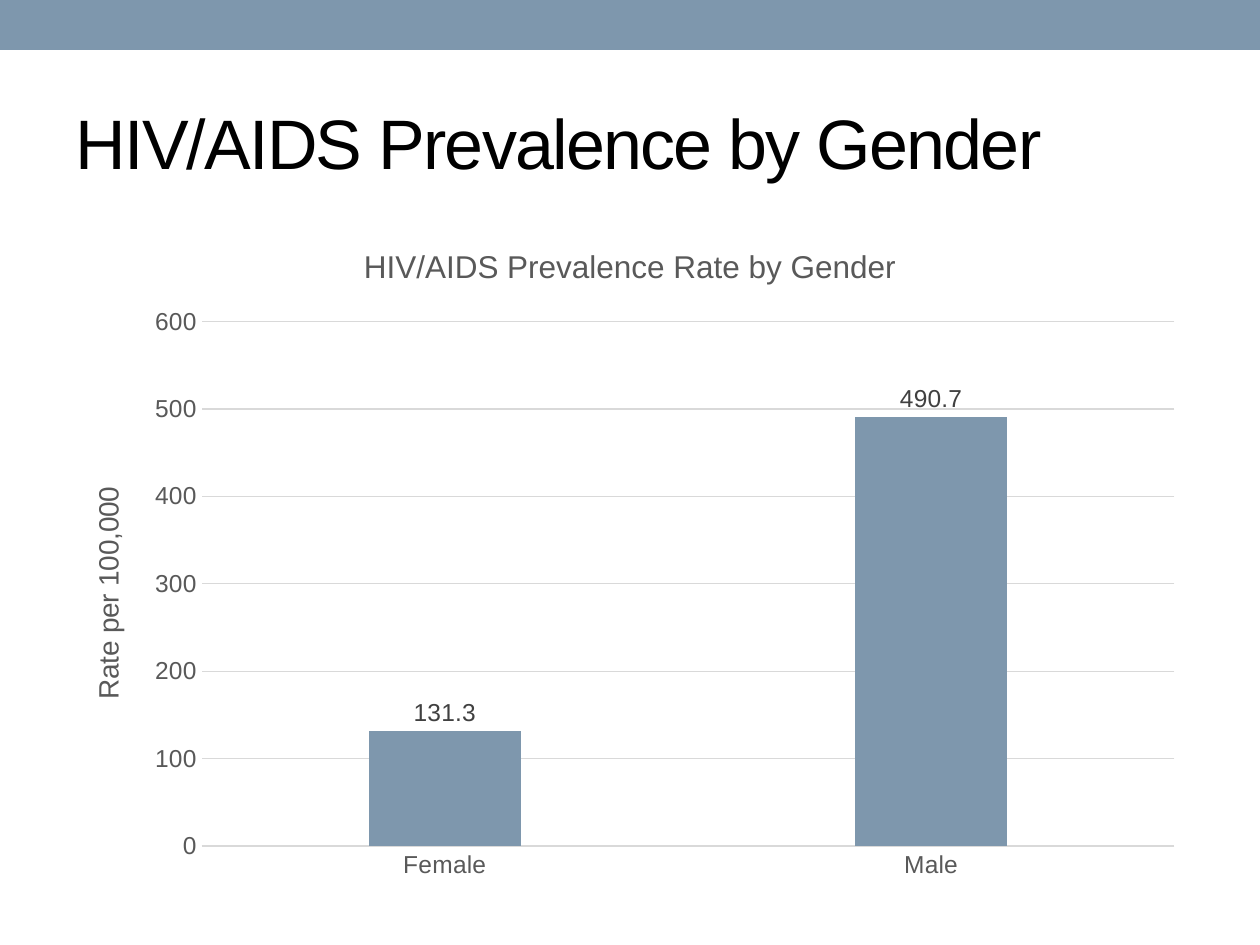
import pptx
import pptx.chart.data
import pptx.dml.color
import pptx.enum.chart
import pptx.enum.shapes
import pptx.enum.text
import pptx.util

SCALE = 914400 / 126
BLUE = "7E97AD"
GREY = "595959"
PALE = "D9D9D9"


def emu(*px):
    return [pptx.util.Emu(round(n * SCALE)) for n in px]


def tint(code):
    return pptx.dml.color.RGBColor.from_string(code)


class Deck:
    """Holds the font and the current slide."""

    def __init__(self, width, height, face):
        self.face = face
        self.show = pptx.Presentation()
        self.show.slide_width, self.show.slide_height = emu(width, height)
        self.slide = self.show.slides.add_slide(self.show.slide_layouts[5])

    def style(self, font, size, color):
        font.name = self.face
        font.size = pptx.util.Pt(size)
        font.bold = False
        font.color.rgb = tint(color)

    def rule(self, line):
        line.color.rgb = tint(PALE)
        line.width = pptx.util.Pt(0.75)

    def band(self, box, color):
        kind = pptx.enum.shapes.MSO_SHAPE.RECTANGLE
        band = self.slide.shapes.add_shape(kind, *emu(*box))
        band.shadow.inherit = False
        band.fill.solid()
        band.fill.fore_color.rgb = tint(color)
        band.line.fill.background()

    def title(self, box, text, size):
        head = self.slide.shapes.title
        head.left, head.top, head.width, head.height = emu(*box)
        frame = head.text_frame
        frame.text = text
        frame.word_wrap = True
        frame.vertical_anchor = pptx.enum.text.MSO_ANCHOR.MIDDLE
        part = frame.paragraphs[0]
        part.alignment = pptx.enum.text.PP_ALIGN.LEFT
        run = part.runs[0]
        self.style(run.font, size, "000000")
        run.font._element.set("spc", "-100")

    def label(self, title, text, size):
        frame = title.text_frame
        frame.text = text
        self.style(frame.paragraphs[0].runs[0].font, size, GREY)
        return frame

    def chart(self, box, title, unit, names, values):
        data = pptx.chart.data.CategoryChartData()
        data.categories = names
        data.add_series("Series 1", values)
        kind = pptx.enum.chart.XL_CHART_TYPE.COLUMN_CLUSTERED
        chart = self.slide.shapes.add_chart(kind, *emu(*box), data).chart
        self.style(chart.font, 10, "000000")
        chart.has_legend = False
        chart.has_title = True
        self.label(chart.chart_title, title, 18)
        chart.chart_title.include_in_layout = False

        base, rate = chart.category_axis, chart.value_axis
        for axis in (base, rate):
            axis.major_tick_mark = pptx.enum.chart.XL_TICK_MARK.NONE
            axis.minor_tick_mark = pptx.enum.chart.XL_TICK_MARK.NONE
            self.style(axis.tick_labels.font, 14, GREY)
        self.rule(base.format.line)
        rate.format.line.fill.background()
        rate.minimum_scale, rate.maximum_scale, rate.major_unit = 0, 600, 100
        self.rule(rate.major_gridlines.format.line)
        body = self.label(rate.axis_title, unit, 16)._element.bodyPr
        body.set("rot", "-5400000")
        body.set("vert", "horz")

        plot = chart.plots[0]
        plot.vary_by_categories = False
        plot.gap_width = 219
        plot.overlap = -27
        bars = plot.series[0]
        bars.format.fill.solid()
        bars.format.fill.fore_color.rgb = tint(BLUE)
        marks = bars.data_labels
        marks.show_value = True
        marks.position = pptx.enum.chart.XL_LABEL_POSITION.OUTSIDE_END
        self.style(marks.font, 14, "404040")


def main():
    deck = Deck(1260, 945, "Arial")
    deck.band((0, 0, 1260, 50), BLUE)
    deck.title((63, 73, 1134, 136), "HIV/AIDS Prevalence by Gender", 40)
    deck.chart((63, 220, 1134, 672), "HIV/AIDS Prevalence Rate by Gender",
               "Rate per 100,000", ("Female", "Male"), (131.3, 490.7))
    deck.show.save("out.pptx")


if __name__ == "__main__":
    main()
